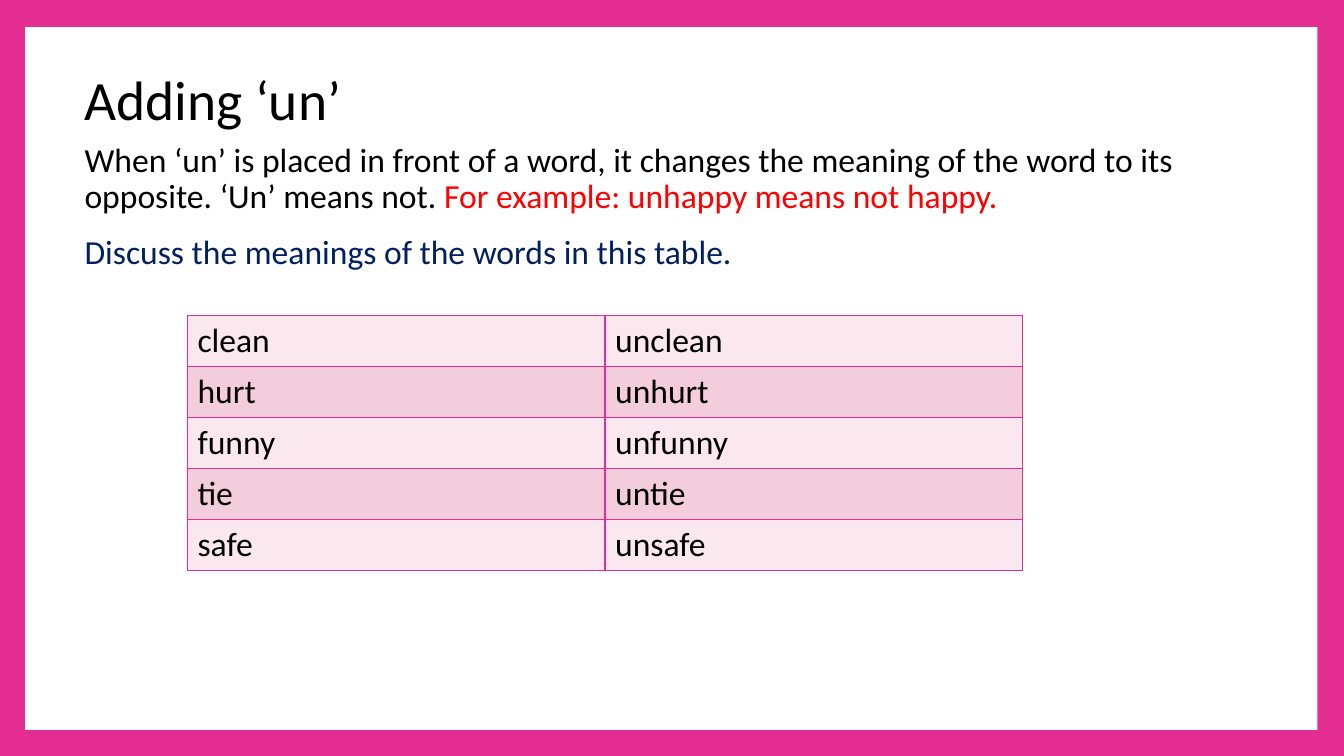
from lxml.etree import SubElement
from pptx import Presentation
from pptx.dml.color import RGBColor
from pptx.enum.shapes import MSO_SHAPE as Shape
from pptx.enum.text import MSO_ANCHOR as Anchor
from pptx.oxml.ns import qn
from pptx.util import Pt

PINK = RGBColor(0xE3, 0x2D, 0x91)
PALE_PINK = RGBColor(0xFA, 0xE8, 0xEE)
ROSE = RGBColor(0xF4, 0xCD, 0xDC)
WHITE = RGBColor(0xFF, 0xFF, 0xFF)
BLACK = RGBColor(0, 0, 0)
RED = RGBColor(0xFF, 0, 0)
NAVY = RGBColor(0, 0x20, 0x60)

FONT = "Calibri"
BODY_SIZE = 24
PREFIX = "un"
WORDS = ["clean", "hurt", "funny", "tie", "safe"]
INTRO = [
    [("When ‘un’ is placed in front of a word, it changes the meaning of "
      "the word to its opposite. ‘Un’ means not. ", BLACK),
     ("For example: unhappy means not happy.", RED)],
    [("Discuss the meanings of the words in this table.", NAVY)],
]


def add_frame(page, left, top, width, height):
    """Pink page edge around a white panel."""
    page.background.fill.solid()
    page.background.fill.fore_color.rgb = PINK
    panel = page.shapes.add_shape(
        Shape.RECTANGLE, Pt(left), Pt(top), Pt(width), Pt(height))
    panel.shadow.inherit = False
    panel.fill.solid()
    panel.fill.fore_color.rgb = WHITE
    panel.line.fill.background()


def add_text(page, left, top, width, height, paragraphs, size, anchor):
    """Each paragraph is a list of (text, colour) spans."""
    box = page.shapes.add_textbox(Pt(left), Pt(top), Pt(width), Pt(height))
    frame = box.text_frame
    frame.word_wrap = True
    frame.vertical_anchor = anchor
    for index, spans in enumerate(paragraphs):
        para = frame.add_paragraph() if index else frame.paragraphs[0]
        para.line_spacing = 0.9
        para.space_before = Pt(14 if index else 0)
        para.font.name = FONT
        para.font.size = Pt(size)
        for text, colour in spans:
            span = para.add_run()
            span.text = text
            span.font.color.rgb = colour


def add_cell_borders(cell):
    properties = cell._tc.get_or_add_tcPr()
    for side in ("a:lnL", "a:lnR", "a:lnT", "a:lnB"):
        line = SubElement(properties, qn(side), w=str(Pt(1)))
        fill = SubElement(line, qn("a:solidFill"))
        SubElement(fill, qn("a:srgbClr"), val=str(PINK))


def add_word_table(page, left, top, width, height):
    table = page.shapes.add_table(
        len(WORDS), 2, Pt(left), Pt(top), Pt(width), Pt(height)).table
    for row, word in enumerate(WORDS):
        for column, text in enumerate((word, PREFIX + word)):
            cell = table.cell(row, column)
            add_cell_borders(cell)
            cell.fill.solid()
            cell.fill.fore_color.rgb = ROSE if row % 2 else PALE_PINK
            cell.text = text
            font = cell.text_frame.paragraphs[0].font
            font.name = FONT
            font.size = Pt(BODY_SIZE)
            font.color.rgb = BLACK


def main():
    deck = Presentation()
    deck.slide_width, deck.slide_height = Pt(960), Pt(540)
    page = deck.slides.add_slide(deck.slide_layouts[6])
    add_frame(page, 18, 19.4, 923, 502)
    add_text(page, 53.3, 48.2, 677, 50.4, [[("Adding ‘un’", BLACK)]],
             39.6, Anchor.MIDDLE)
    add_text(page, 53.3, 98.6, 828.7, 342, INTRO, BODY_SIZE, Anchor.TOP)
    add_word_table(page, 133.9, 225.4, 596.6, 182)
    deck.save("out.pptx")


if __name__ == "__main__":
    main()
